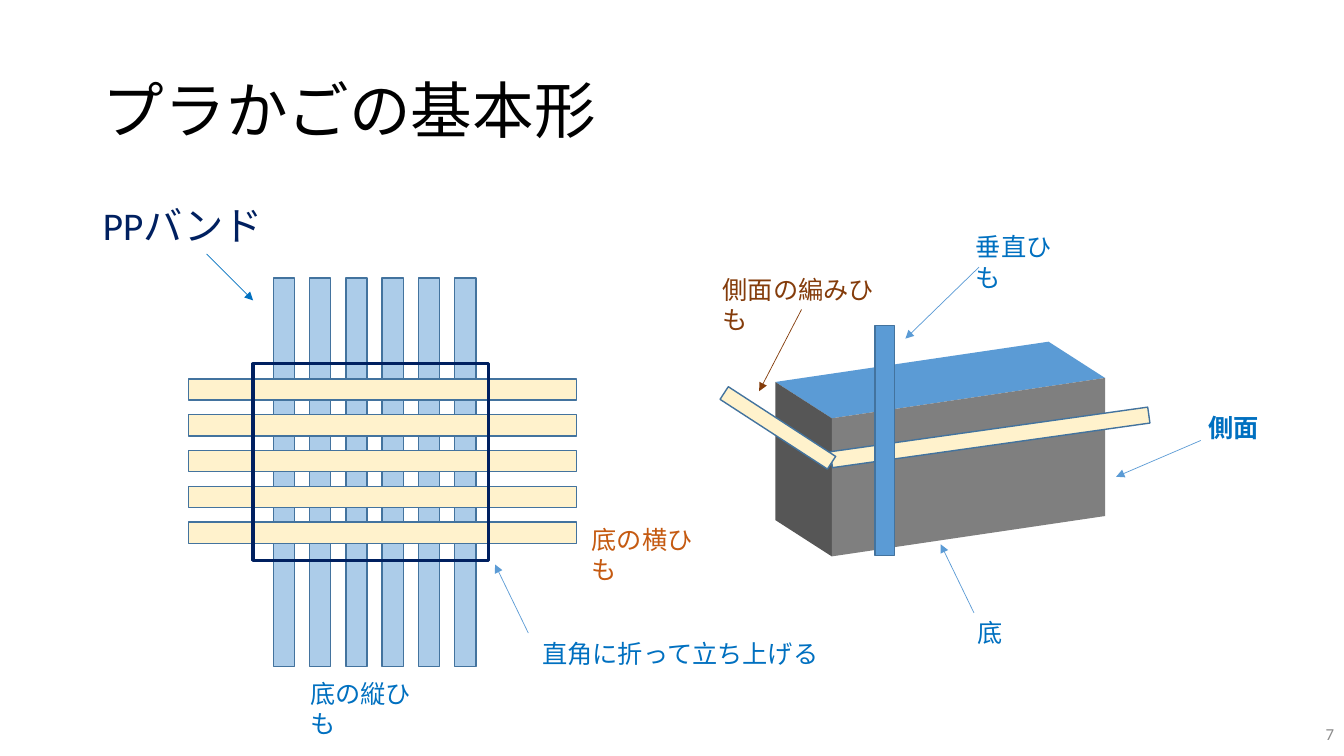
import pptx
import pptx.util
import pptx.dml.color
import pptx.enum.shapes
import pptx.enum.text
import pptx.oxml.ns
import lxml.etree

Inches = pptx.util.Inches
RGBColor = pptx.dml.color.RGBColor
RECTANGLE = pptx.enum.shapes.MSO_SHAPE.RECTANGLE
ALIGN = pptx.enum.text.PP_ALIGN
ANCHOR = pptx.enum.text.MSO_ANCHOR

FONT = "Calibri"
BLACK = RGBColor(0x00, 0x00, 0x00)
GREY = RGBColor(0x8C, 0x8C, 0x8C)
NAVY = RGBColor(0x00, 0x20, 0x60)
BLUE = RGBColor(0x00, 0x70, 0xC0)
BAND_BLUE = RGBColor(0x5B, 0x9B, 0xD5)
BAND_EDGE = RGBColor(0x43, 0x73, 0x9E)
CREAM = RGBColor(0xFF, 0xF2, 0xCC)
ORANGE = RGBColor(0xC5, 0x5A, 0x11)
BROWN = RGBColor(0x84, 0x3C, 0x0B)
FRONT_GREY = RGBColor(0x7F, 0x7F, 0x7F)
SIDE_GREY = RGBColor(0x56, 0x56, 0x56)


def add_xml(parent, tag, **attributes):
    """Append a drawing element to the parent and return it."""
    return lxml.etree.SubElement(parent, pptx.oxml.ns.qn(tag), attributes)


def place(shape, box):
    """Move a shape to a box of left, top, width and height in inches."""
    shape.left, shape.top, shape.width, shape.height = map(Inches, box)


def style_para(para, size, colour, bold=False):
    """Set the font of a paragraph."""
    para.font.name = FONT
    para.font.size = pptx.util.Pt(size)
    para.font.color.rgb = colour
    para.font.bold = bold


def add_label(page, text, box, colour=BLUE, size=18, bold=False):
    """Add a wrapped text box and return it."""
    label = page.shapes.add_textbox(*map(Inches, box))
    label.text_frame.word_wrap = True
    para = label.text_frame.paragraphs[0]
    para.text = text
    style_para(para, size, colour, bold)
    return label


def add_band(page, box, fill, rotation=0, opacity=None):
    """Add one strip of band, optionally turned or see-through."""
    band = page.shapes.add_shape(RECTANGLE, *map(Inches, box))
    band.shadow.inherit = False
    band.rotation = rotation
    band.fill.solid()
    band.fill.fore_color.rgb = fill
    band.line.color.rgb = BAND_EDGE
    band.line.width = pptx.util.Pt(1)
    if opacity:
        colour = band.element.spPr.find(".//" + pptx.oxml.ns.qn("a:srgbClr"))
        add_xml(colour, "a:alpha", val=str(opacity * 1000))


def add_arrow(page, start, end, colour=BAND_BLUE):
    """Add a thin arrow from start to end."""
    arrow = page.shapes.add_connector(
        pptx.enum.shapes.MSO_CONNECTOR.STRAIGHT, *map(Inches, (*start, *end)))
    arrow.line.color.rgb = colour
    arrow.line.width = pptx.util.Pt(0.5)
    add_xml(arrow.line._get_or_add_ln(), "a:tailEnd", type="triangle")
    add_xml(arrow._element.spPr, "a:effectLst")


def add_face(page, corners, colour):
    """Add one flat face of the basket."""
    points = [(Inches(x), Inches(y)) for x, y in corners]
    builder = page.shapes.build_freeform(*points[0])
    builder.add_line_segments(points[1:], close=True)
    face = builder.convert_to_shape()
    face.shadow.inherit = False
    face.fill.solid()
    face.fill.fore_color.rgb = colour
    face.line.fill.background()


def fill_title(page, box):
    """Fill the title placeholder."""
    title = page.shapes.title
    place(title, box)
    frame = title.text_frame
    frame.text = "プラかごの基本形"
    frame.vertical_anchor = ANCHOR.MIDDLE
    frame.auto_size = pptx.enum.text.MSO_AUTO_SIZE.NONE
    para = frame.paragraphs[0]
    para.alignment = ALIGN.LEFT
    para.line_spacing = 0.9
    style_para(para, 44, BLACK)


def fill_body(page, box):
    """Fill the body placeholder with the material name, without a bullet."""
    body = page.placeholders[1]
    place(body, box)
    body.text_frame.text = "PPバンド"
    body.text_frame.auto_size = pptx.enum.text.MSO_AUTO_SIZE.NONE
    para = body.text_frame.paragraphs[0]
    para.line_spacing = 0.9
    para.space_before = pptx.util.Pt(10)
    style_para(para, 28, NAVY)
    properties = para._p.get_or_add_pPr()
    properties.set("marL", "0")
    properties.set("indent", "0")
    add_xml(properties, "a:buNone") if properties.find(
        pptx.oxml.ns.qn("a:defRPr")) is None else properties.find(
        pptx.oxml.ns.qn("a:defRPr")).addprevious(
        lxml.etree.Element(pptx.oxml.ns.qn("a:buNone")))


def draw_base(page, box):
    """Draw the woven base with its fold line and labels."""
    left, top, width, height = box
    for column in range(6):
        add_band(page, (left + 0.84 + column * 0.36, top, 0.21, height), BAND_BLUE, opacity=50)
    for row in range(5):
        add_band(page, (left, top + 1 + row * 0.355, width, 0.21), CREAM)
    fold = page.shapes.add_shape(
        RECTANGLE, *map(Inches, (left + 0.64, top + 0.85, 2.34, 1.95)))
    fold.shadow.inherit = False
    fold.fill.background()
    fold.line.color.rgb = NAVY
    fold.line.width = pptx.util.Pt(2.25)
    add_label(page, "底の縦ひも", (left + 1.11, top + 3.92, 1.4, 0.4))
    add_label(page, "底の横ひも", (left + 3.9, top + 2.39, 1.4, 0.4), ORANGE)
    add_label(page, "直角に折って立ち上げる", (left + 3.41, top + 3.52, 2.95, 0.71))
    add_arrow(page, (left + 3.37, top + 3.52), (left + 3.04, top + 2.84))
    add_arrow(page, (left + 0.18, top - 0.24), (left + 0.64, top + 0.22), BLUE)


def draw_basket(page, box):
    """Draw the raised basket as a solid with its bands and labels."""
    left, top, width, height = box
    back_left, back_right = (left + 0.62, top + 1.54), (left + 3.33, top + 1.14)
    front_left, front_right = (left + 1.18, top + 1.9), (left + 3.89, top + 1.5)
    low_back, low_left, low_right = [
        (x, y + 1.37) for x, y in (back_left, front_left, front_right)]
    add_face(page, (back_left, back_right, front_right, front_left), BAND_BLUE)
    add_face(page, (back_left, front_left, low_left, low_back), SIDE_GREY)
    add_face(page, (front_left, front_right, low_right, low_left), FRONT_GREY)
    add_band(page, (left + 2.67, top + 0.5, 0.16, 3.18), CREAM, rotation=82)
    add_band(page, (left + 0.57, top + 1.36, 0.15, 1.27), CREAM, rotation=303)
    add_band(page, (left + 1.61, top + 0.98, 0.19, 2.28), BAND_BLUE)
    add_label(page, "側面の編みひも", (left, top + 0.42, 1.9, 0.4), BROWN)
    add_label(page, "垂直ひも", (left + 2.51, top, 1.15, 0.4))
    add_label(page, "側面", (left + width - 0.71, top + 1.79, 0.71, 0.4), bold=True)
    add_label(page, "底", (left + 2.53, top + height - 0.4, 0.45, 0.4))
    add_arrow(page, (left + 0.88, top + 0.82), (left + 0.46, top + 1.63), BROWN)
    add_arrow(page, (left + 2.64, top + 0.4), (left + 1.91, top + 1.11))
    add_arrow(page, (left + 4.84, top + 2.12), (left + 4, top + 2.48))
    add_arrow(page, (left + 2.59, top + 3.83), (left + 2.26, top + 3.15))


def add_page_number(page, box):
    """Add the page number."""
    number = add_label(page, "7", box, GREY, 12)
    number.text_frame.vertical_anchor = ANCHOR.MIDDLE
    number.text_frame.paragraphs[0].alignment = ALIGN.RIGHT


def main():
    """Build and save the deck."""
    deck = pptx.Presentation()
    deck.slide_width, deck.slide_height = Inches(13.33), Inches(7.5)
    page = deck.slides.add_slide(deck.slide_layouts[1])
    fill_title(page, (0.92, 0.4, 11.5, 1.45))
    fill_body(page, (0.92, 2, 11.5, 4.76))
    draw_base(page, (1.87, 2.76, 3.85, 3.85))
    draw_basket(page, (7.07, 2.25, 5.53, 4.23))
    add_page_number(page, (10.33, 7.08, 3, 0.4))
    deck.save("out.pptx")


if __name__ == "__main__":
    main()
